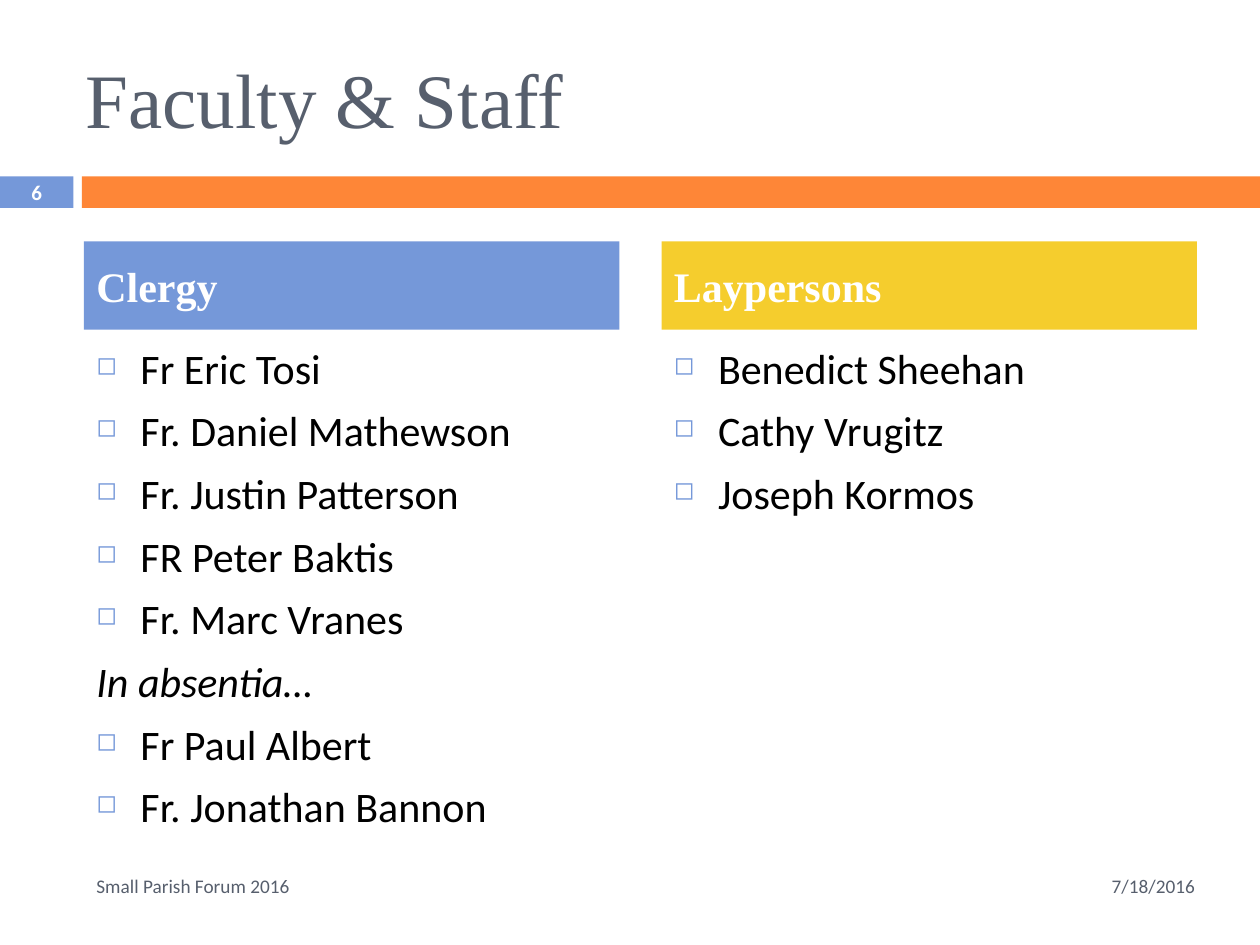
from dataclasses import dataclass
from typing import Optional

import pptx
import pptx.dml.color
import pptx.enum.shapes
import pptx.enum.text
import pptx.oxml
import pptx.oxml.ns
import pptx.util

COLORS = {
    "blue": "7598D9",
    "orange": "FE8637",
    "yellow": "F5CD2D",
    "slate": "575F6D",
    "black": "000000",
    "white": "FFFFFF",
}
SERIF, SANS = "Times New Roman", "Calibri"
ALIGN = pptx.enum.text.PP_ALIGN
ANCHOR = pptx.enum.text.MSO_ANCHOR
Pt = pptx.util.Pt

SLIDE_WIDTH, SLIDE_HEIGHT = 720, 540
COLUMN_WIDTH = 306
HEADING_TOP, HEADING_HEIGHT = 138, 50.4
NAMES_TOP, NAMES_HEIGHT = 192, 282
BAND_TOP, BAND_HEIGHT = 100.8, 18
BULLET_INDENT = 25.2
FOOTER_TOP, FOOTER_HEIGHT = 492, 28.8


@dataclass
class Box:
    left: float
    top: float
    width: float
    height: float

    def lengths(self) -> list:
        return [Pt(v) for v in (self.left, self.top, self.width, self.height)]


@dataclass
class Entry:
    text: str
    bulleted: bool = True


@dataclass
class Column:
    heading: str
    left: float
    fill: str
    entries: list[Entry]


def rgb(color: str) -> pptx.dml.color.RGBColor:
    return pptx.dml.color.RGBColor.from_string(COLORS[color])


def add_bar(slide, box: Box, fill: str):
    bar = slide.shapes.add_shape(
        pptx.enum.shapes.MSO_SHAPE.RECTANGLE, *box.lengths())
    bar.shadow.inherit = False
    bar.fill.solid()
    bar.fill.fore_color.rgb = rgb(fill)
    bar.line.fill.background()
    return bar


def add_bullet(paragraph) -> None:
    properties = paragraph._p.get_or_add_pPr()
    properties.set("marL", str(Pt(BULLET_INDENT)))
    properties.set("indent", str(-Pt(BULLET_INDENT)))
    namespace = pptx.oxml.ns.nsdecls("a")
    for xml in (
        f'<a:buClr {namespace}><a:srgbClr val="{COLORS["blue"]}"/></a:buClr>',
        f'<a:buSzPct {namespace} val="60000"/>',
        f'<a:buChar {namespace} char="◻"/>',
    ):
        properties.append(pptx.oxml.parse_xml(xml))


def write(paragraph, text: str, *, size: float, color: str, font: str = SANS,
          bold: bool = False, italic: bool = False, align=ALIGN.LEFT,
          space_before: Optional[float] = None) -> None:
    paragraph.alignment = align
    if space_before is not None:
        paragraph.space_before = Pt(space_before)
    run = paragraph.add_run()
    run.text = text
    run.font.name = font
    run.font.size = Pt(size)
    run.font.bold = bold
    run.font.italic = italic
    run.font.color.rgb = rgb(color)


def prepare_frame(shape, anchor=ANCHOR.MIDDLE):
    frame = shape.text_frame
    frame.word_wrap = True
    frame.vertical_anchor = anchor
    return frame


def add_label(slide, box: Box, text: str, **text_format) -> None:
    label = slide.shapes.add_textbox(*box.lengths())
    write(prepare_frame(label).paragraphs[0], text, **text_format)


def add_column(slide, column: Column) -> None:
    # Coloured heading
    heading = add_bar(slide, Box(column.left, HEADING_TOP, COLUMN_WIDTH,
                                 HEADING_HEIGHT), column.fill)
    write(prepare_frame(heading).paragraphs[0], column.heading, size=24,
          color="white", font=SERIF, bold=True, space_before=7)

    # Names below it
    names = slide.shapes.add_textbox(
        *Box(column.left, NAMES_TOP, COLUMN_WIDTH, NAMES_HEIGHT).lengths())
    frame = prepare_frame(names, ANCHOR.TOP)
    for index, entry in enumerate(column.entries):
        paragraph = frame.add_paragraph() if index else frame.paragraphs[0]
        write(paragraph, entry.text, size=24, color="black",
              italic=not entry.bulleted, space_before=7)
        if entry.bulleted:
            add_bullet(paragraph)


COLUMNS = [
    Column("Clergy", 48, "blue", [
        Entry("Fr Eric Tosi"),
        Entry("Fr. Daniel Mathewson"),
        Entry("Fr. Justin Patterson"),
        Entry("FR Peter Baktis"),
        Entry("Fr. Marc Vranes"),
        Entry("In absentia…", bulleted=False),
        Entry("Fr Paul Albert"),
        Entry("Fr. Jonathan Bannon"),
    ]),
    Column("Laypersons", 378, "yellow", [
        Entry("Benedict Sheehan"),
        Entry("Cathy Vrugitz"),
        Entry("Joseph Kormos"),
    ]),
]


def main() -> None:
    deck = pptx.Presentation()
    deck.slide_width, deck.slide_height = Pt(SLIDE_WIDTH), Pt(SLIDE_HEIGHT)
    slide = deck.slides.add_slide(deck.slide_layouts[6])

    # Band with the slide number
    number_box = Box(0, BAND_TOP, 42, BAND_HEIGHT)
    add_bar(slide, number_box, "blue")
    band_left = 46.8
    add_bar(slide, Box(band_left, BAND_TOP, SLIDE_WIDTH - band_left,
                       BAND_HEIGHT), "orange")
    add_label(slide, number_box, "6", size=12, color="white", bold=True,
              align=ALIGN.CENTER)

    # Title
    add_label(slide, Box(42, 21.6, 642, 68.4), "Faculty & Staff", size=44,
              color="slate", font=SERIF)

    # Clergy and laypersons
    for column in COLUMNS:
        add_column(slide, column)

    # Footer
    add_label(slide, Box(48, FOOTER_TOP, 427, FOOTER_HEIGHT),
              "Small Parish Forum 2016", size=11, color="slate")
    add_label(slide, Box(480, FOOTER_TOP, 210, FOOTER_HEIGHT), "7/18/2016",
              size=11, color="slate", align=ALIGN.RIGHT)

    deck.save("out.pptx")


if __name__ == "__main__":
    main()
